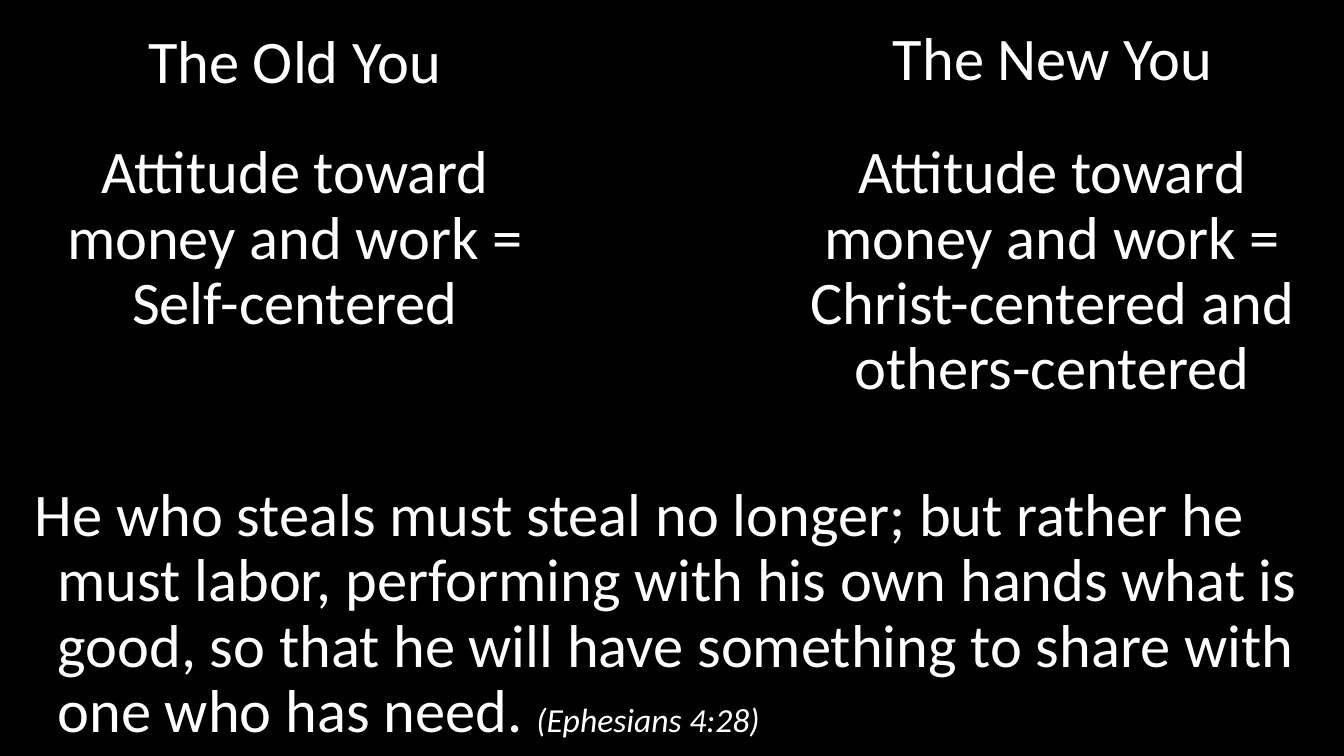
"""Build a slide contrasting the old and new attitude toward money and work."""
from lxml.etree import SubElement
from pptx import Presentation
from pptx.dml.color import RGBColor
from pptx.enum.shapes import MSO_SHAPE
from pptx.enum.text import MSO_ANCHOR, MSO_AUTO_SIZE, PP_ALIGN
from pptx.oxml.ns import qn
from pptx.util import Cm, Pt

COLORS = {"background": "000000", "panel": "000000", "text": "FFFFFF"}
HANGING = 0.48


def write(frame, text, align=PP_ALIGN.CENTER, hanging=0, reference=""):
    frame.word_wrap = True
    frame.auto_size = MSO_AUTO_SIZE.SHAPE_TO_FIT_TEXT
    frame.vertical_anchor = MSO_ANCHOR.TOP
    frame.text = text
    if reference:
        frame.paragraphs[-1].add_run().text = reference
    for paragraph in frame.paragraphs:
        paragraph.alignment = align
        paragraph.line_spacing = 0.9
        properties = paragraph._p.get_or_add_pPr()
        properties.set("marL", str(Cm(hanging)))
        properties.set("indent", str(-Cm(hanging)))
        for run in paragraph.runs:
            is_reference = run.text == reference
            run.font.name = "Calibri"
            run.font.size = Pt(20 if is_reference else 36)
            run.font.italic = is_reference
            run.font.color.rgb = RGBColor.from_string(COLORS["text"])


prs = Presentation()
prs.slide_width, prs.slide_height = Cm(28.22), Cm(15.88)
slide = prs.slides.add_slide(prs.slide_layouts[6])
slide.background.fill.solid()
slide.background.fill.fore_color.rgb = RGBColor.from_string(COLORS["background"])

verse = (
    "He who steals must steal no longer; but rather he must labor, performing with "
    "his own hands what is good, so that he will have something to share with one "
    "who has need. "
)
old_attitude = "Attitude toward money and work =\nSelf-centered"
new_attitude = "Attitude toward money and work =\nChrist-centered and others-centered"

panels = [
    (verse, (0.48, 10.05, 27.28, 5.79),
     {"align": PP_ALIGN.LEFT, "hanging": HANGING, "reference": "(Ephesians 4:28)"}),
    (old_attitude, (0.2, 2.85, 11.99, 4.42), {}),
    (new_attitude, (16.1, 2.85, 11.99, 5.79), {}),
    ("The Old You", (2.54, 0.53, 7.29, 1.65), {"hanging": HANGING}),
    ("The New You", (18.14, 0.47, 7.92, 1.65), {"hanging": HANGING}),
]
for text, bounds, text_format in panels:
    panel = slide.shapes.add_shape(MSO_SHAPE.ROUNDED_RECTANGLE, *map(Cm, bounds))
    panel.adjustments[0] = 0
    panel.shadow.inherit = False
    panel.line.fill.background()
    panel.fill.solid()
    panel.fill.fore_color.rgb = RGBColor.from_string(COLORS["panel"])
    panel_color = panel._element.spPr.find(qn("a:solidFill")).find(qn("a:srgbClr"))
    SubElement(panel_color, qn("a:alpha")).set("val", "50000")
    write(panel.text_frame, text, **text_format)

prs.save("out.pptx")
